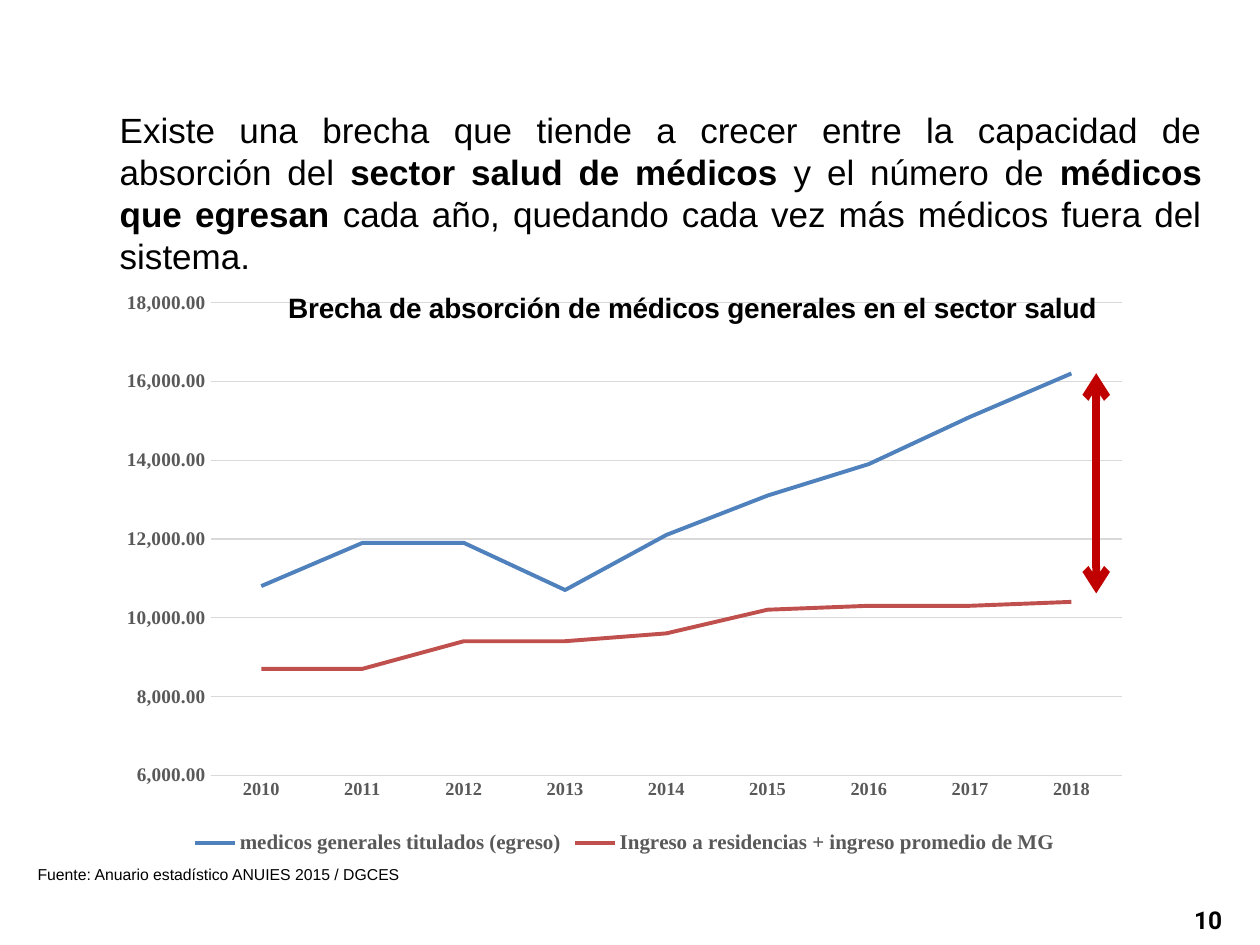
from lxml import etree
from pptx import Presentation, util as u
from pptx.chart.data import CategoryChartData
from pptx.dml.color import RGBColor
from pptx.enum import chart as charts, shapes, text
from pptx.oxml import parse_xml
from pptx.oxml.ns import qn

COLORS = {"ink": "000000", "axis": "595959", "grid": "D9D9D9",
          "graduates": "4F81BD", "intake": "C0504D", "gap": "C00000"}
WIDTH, HEIGHT = u.Inches(10), u.Inches(7.5)
CHART_NS = "http://schemas.openxmlformats.org/drawingml/2006/chart"

STATEMENT = [
    ("Existe una brecha que tiende a crecer entre la capacidad de absorción del ", False),
    ("sector salud de médicos", True),
    (" y el número de ", False),
    ("médicos que egresan ", True),
    ("cada año, quedando cada vez más médicos fuera del sistema.", False),
]
YEARS = [str(year) for year in range(2010, 2019)]
SERIES = [
    ("medicos generales titulados (egreso)", "graduates",
     [10800, 11900, 11900, 10700, 12100, 13100, 13900, 15100, 16200]),
    ("Ingreso a residencias + ingreso promedio de MG", "intake",
     [8700, 8700, 9400, 9400, 9600, 10200, 10300, 10300, 10400]),
]


def share(x, y, width, height):
    return [int(part * whole) for part, whole in
            zip((x, y, width, height), (WIDTH, HEIGHT, WIDTH, HEIGHT))]


def apply(target, values):
    for name, value in values.items():
        setattr(target, name, value)


def style_font(font, size, color="ink", name="Arial", bold=False):
    apply(font, {"size": u.Pt(size), "name": name, "bold": bold})
    font.color.rgb = RGBColor.from_string(COLORS[color])


def style_line(line, color, width):
    line.color.rgb = RGBColor.from_string(COLORS[color])
    line.width = u.Pt(width)


def write_runs(holder, runs, size, align, name="Arial"):
    frame = holder.text_frame
    apply(frame, {"word_wrap": True, "auto_size": text.MSO_AUTO_SIZE.NONE,
                  "vertical_anchor": text.MSO_ANCHOR.TOP})
    paragraph = frame.paragraphs[0]
    paragraph.alignment = align
    for words, bold in runs:
        run = paragraph.add_run()
        run.text = words
        style_font(run.font, size, name=name, bold=bold)


def add_statement(slide, box):
    statement = slide.shapes.title
    apply(statement, dict(zip(("left", "top", "width", "height"), box)))
    write_runs(statement, STATEMENT, 20, text.PP_ALIGN.JUSTIFY)


def add_label(slide, box, words, size, align, **font):
    bold = font.pop("bold", False)
    write_runs(slide.shapes.add_textbox(*box), [(words, bold)], size, align, **font)


def place_part(parent, index, inner=False, **position):
    for old in parent.findall(qn("c:layout")):
        parent.remove(old)
    target = '<c:layoutTarget val="inner"/>' if inner else ""
    modes = "".join(f'<c:{key}Mode val="edge"/>' for key in "xy")
    values = "".join(f'<c:{key} val="{value}"/>' for key, value in position.items())
    parent.insert(index, parse_xml(
        f'<c:layout xmlns:c="{CHART_NS}"><c:manualLayout>'
        f"{target}{modes}{values}</c:manualLayout></c:layout>"))


def style_axes(chart):
    for axis, size in ((chart.category_axis, 10.5), (chart.value_axis, 11)):
        apply(axis, {"major_tick_mark": charts.XL_TICK_MARK.NONE,
                     "minor_tick_mark": charts.XL_TICK_MARK.NONE})
        style_font(axis.tick_labels.font, size, "axis", "Times New Roman", True)
    style_line(chart.category_axis.format.line, "grid", 0.75)
    doctors = chart.value_axis
    apply(doctors, {"minimum_scale": 6000, "maximum_scale": 18000,
                    "major_unit": 2000, "has_major_gridlines": True})
    apply(doctors.tick_labels, {"number_format": "#,##0.00",
                                "number_format_is_linked": False})
    doctors.format.line.fill.background()
    style_line(doctors.major_gridlines.format.line, "grid", 0.75)


def add_gap_chart(slide, box):
    data = CategoryChartData(number_format="#,##0.00")
    data.categories = YEARS
    for name, _, values in SERIES:
        data.add_series(name, values)
    chart = slide.shapes.add_chart(charts.XL_CHART_TYPE.LINE, *box, data).chart
    style_font(chart.font, 10, name="Times New Roman")
    apply(chart, {"has_title": True, "has_legend": True})
    apply(chart.legend, {"position": charts.XL_LEGEND_POSITION.BOTTOM,
                         "include_in_layout": False})
    style_font(chart.legend.font, 12, "axis", "Times New Roman", True)
    heading = chart.chart_title.text_frame.paragraphs[0].add_run()
    heading.text = "Brecha de absorción de médicos generales en el sector salud"
    style_font(heading.font, 16, bold=True)
    style_axes(chart)
    plot = chart.plots[0]
    plot.vary_by_categories = False
    for series, (_, color, _) in zip(plot.series, SERIES):
        series.smooth = False
        style_line(series.format.line, color, 2.25)
    root = chart.element
    title = root.find(".//" + qn("c:title"))
    place_part(title, 1, x=0.17, y=0.04)
    title.find(qn("c:overlay")).set("val", "1")
    place_part(root.find(".//" + qn("c:plotArea")), 0, inner=True,
               x=0.1, y=0.07, w=0.88, h=0.79)


def add_gap_arrow(slide, box):
    x, top, _, height = box
    arrow = slide.shapes.add_connector(
        shapes.MSO_CONNECTOR.STRAIGHT, x, top, x, top + height)
    style_line(arrow.line, "gap", 4.5)
    properties = arrow.element.spPr
    line = properties.find(qn("a:ln"))
    for end in ("a:headEnd", "a:tailEnd"):
        etree.SubElement(line, qn(end), type="arrow")
    etree.SubElement(properties, qn("a:effectLst"))


def main():
    deck = Presentation()
    apply(deck, {"slide_width": WIDTH, "slide_height": HEIGHT})
    slide = deck.slides.add_slide(deck.slide_layouts[5])
    add_statement(slide, share(0.085, 0.108, 0.879, 0.193))
    add_gap_chart(slide, share(0.085, 0.276, 0.822, 0.633))
    add_label(slide, share(0.02, 0.909, 0.348, 0.053),
              "Fuente: Anuario estadístico ANUIES 2015 / DGCES", 9, text.PP_ALIGN.LEFT)
    add_gap_arrow(slide, share(0.87, 0.395, 0, 0.233))
    add_label(slide, share(0.747, 0.951, 0.233, 0.049), "10", 14,
              text.PP_ALIGN.RIGHT, name="Roboto", bold=True)
    deck.save("out.pptx")


if __name__ == "__main__":
    main()
